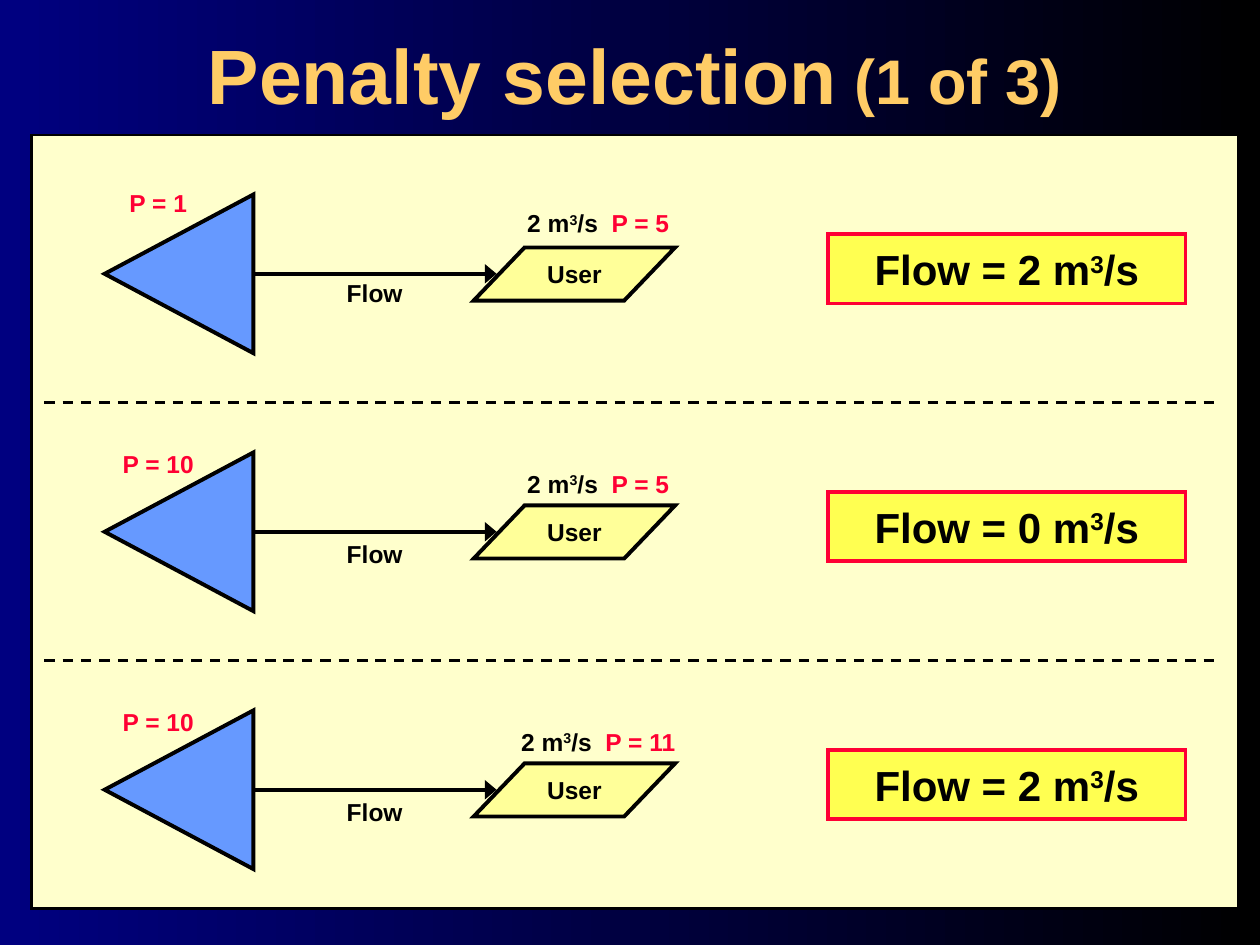
import pptx
import pptx.dml.color
import pptx.enum.dml
import pptx.enum.shapes
import pptx.enum.text
import pptx.oxml
import pptx.oxml.ns
import pptx.util

Cm = pptx.util.Cm
SHAPES = pptx.enum.shapes.MSO_SHAPE
ANCHORS = pptx.enum.text.MSO_ANCHOR
BLACK, RED = "000000", "FF0033"
FIRST_ROW, ROW_STEP = 5.52, 5.2
SUPERSCRIPT = 30000

# Source penalty, demand penalty, resulting flow, label shift
CASES = [("P = 1", "P = 5", 2, -0.05), ("P = 10", "P = 5", 0, 0), ("P = 10", "P = 11", 2, 0)]


def rgb(value):
    return pptx.dml.color.RGBColor.from_string(value)


def add_xml(parent, tag, **attributes):
    child = pptx.oxml.parse_xml(f"<a:{tag} {pptx.oxml.ns.nsdecls('a')}/>")
    for name, value in attributes.items():
        child.set(name, value)
    parent.append(child)


def write(item, spans, size, line_spacing=1.0, wrap=False, anchor=ANCHORS.MIDDLE):
    """Fill one centred paragraph with (text, format) spans; unwrapped text gets no margins."""
    frame = item.text_frame
    layout = {"word_wrap": wrap, "vertical_anchor": anchor}
    if not wrap:
        layout |= {f"margin_{side}": 0 for side in ("left", "top", "right", "bottom")}
    for name, value in layout.items():
        setattr(frame, name, value)
    para = frame.paragraphs[0]
    para.alignment = pptx.enum.text.PP_ALIGN.CENTER
    para.line_spacing = line_spacing
    for text, changes in spans:
        look = {"color": BLACK, "size": size, "baseline": 0} | changes
        span = para.add_run()
        span.text = text
        font = {"name": "Arial", "bold": True, "size": pptx.util.Pt(look["size"])}
        for name, value in font.items():
            setattr(span.font, name, value)
        span.font.color.rgb = rgb(look["color"])
        if look["baseline"]:
            span.font._element.set("baseline", str(look["baseline"]))


def flow_spans(start, end=""):
    return [(start + " m", {}), ("3", {"baseline": SUPERSCRIPT}), ("/s" + end, {})]


def add_text(page, place, spans, size, **layout):
    box = page.shapes.add_textbox(*map(Cm, place))
    write(box, spans, size, **layout)


def add_block(page, kind, place, fill, line=BLACK, width=2.25, opacity=None):
    block = page.shapes.add_shape(kind, *map(Cm, place))
    block.shadow.inherit = False
    block.fill.solid()
    block.fill.fore_color.rgb = rgb(fill)
    block.line.color.rgb = rgb(line)
    block.line.width = pptx.util.Pt(width)
    add_xml(block.line._get_or_add_ln(), "miter", lim="800000")
    if opacity:
        color = block.fill._xPr.find(".//" + pptx.oxml.ns.qn("a:srgbClr"))
        add_xml(color, "alpha", val=str(opacity * 1000))
    return block


def add_line(page, left, right, y, width, dashed=False, arrow=False):
    straight = pptx.enum.shapes.MSO_CONNECTOR.STRAIGHT
    rule = page.shapes.add_connector(straight, Cm(left), Cm(y), Cm(right), Cm(y))
    rule.line.color.rgb = rgb(BLACK)
    rule.line.width = pptx.util.Pt(width)
    if dashed:
        rule.line.dash_style = pptx.enum.dml.MSO_LINE.DASH
    if arrow:
        add_xml(rule.line._get_or_add_ln(), "tailEnd", type="triangle", w="lg", len="med")
    add_xml(rule._element.spPr, "effectLst")


def add_case(page, middle, source_penalty, user_penalty, flow, shift):
    """Draw one source, its arrow to the user, and the resulting flow."""
    labels = middle + shift
    result = add_block(page, SHAPES.RECTANGLE, (16.69, middle - 0.8, 7.21, 1.4),
                       "FFFF00", RED, opacity=60)
    write(result, flow_spans(f"Flow = {flow}"), 24)
    add_line(page, 5.13, 10.01, middle, 2.25, arrow=True)
    user = add_block(page, SHAPES.PARALLELOGRAM, (9.55, middle - 0.53, 4.06, 1.07), "FFFF99")
    user.adjustments[0] = 0.958
    write(user, [("User", {})], 14)
    source = add_block(page, SHAPES.ISOSCELES_TRIANGLE, (2.01, middle - 1.5, 3.2, 3), "6699FF")
    source.rotation = 270
    add_text(page, (5.75, labels + 0.07, 3.61, 0.74), [("Flow", {})], 14, wrap=True)
    add_text(page, (2.29, labels - 1.65, 1.8, 0.66),
             [(source_penalty, {"color": RED})], 14, line_spacing=0.8)
    demand = flow_spans("2", "  ") + [(user_penalty, {"color": RED})]
    add_text(page, (10.36, labels - 1.35, 3.4, 0.86), demand, 14, line_spacing=0.8)


def paint_background(page):
    fill = page.background.fill
    fill.gradient()
    fill.gradient_angle = 0
    for stop, color, position in zip(fill.gradient_stops, ("000080", BLACK), (0, 1)):
        stop.color.rgb = rgb(color)
        stop.position = position


def main():
    deck = pptx.Presentation()
    deck.slide_width, deck.slide_height = Cm(25.4), Cm(19.05)
    page = deck.slides.add_slide(deck.slide_layouts[6])
    paint_background(page)
    add_block(page, SHAPES.RECTANGLE, (0.64, 2.72, 24.33, 15.6), "FFFFCC", width=1.5)
    gold = {"color": "FFCC66"}
    add_text(page, (0.41, 0.43, 24.77, 1.91),
             [("Penalty selection", gold), (" (1 of 3)", gold | {"size": 36})],
             44, wrap=True, anchor=ANCHORS.TOP)
    for row, case in enumerate(CASES):
        middle = FIRST_ROW + row * ROW_STEP
        if row:
            add_line(page, 0.89, 24.51, middle - ROW_STEP / 2, 1.5, dashed=True)
        add_case(page, middle, *case)
    deck.save("out.pptx")


if __name__ == "__main__":
    main()
